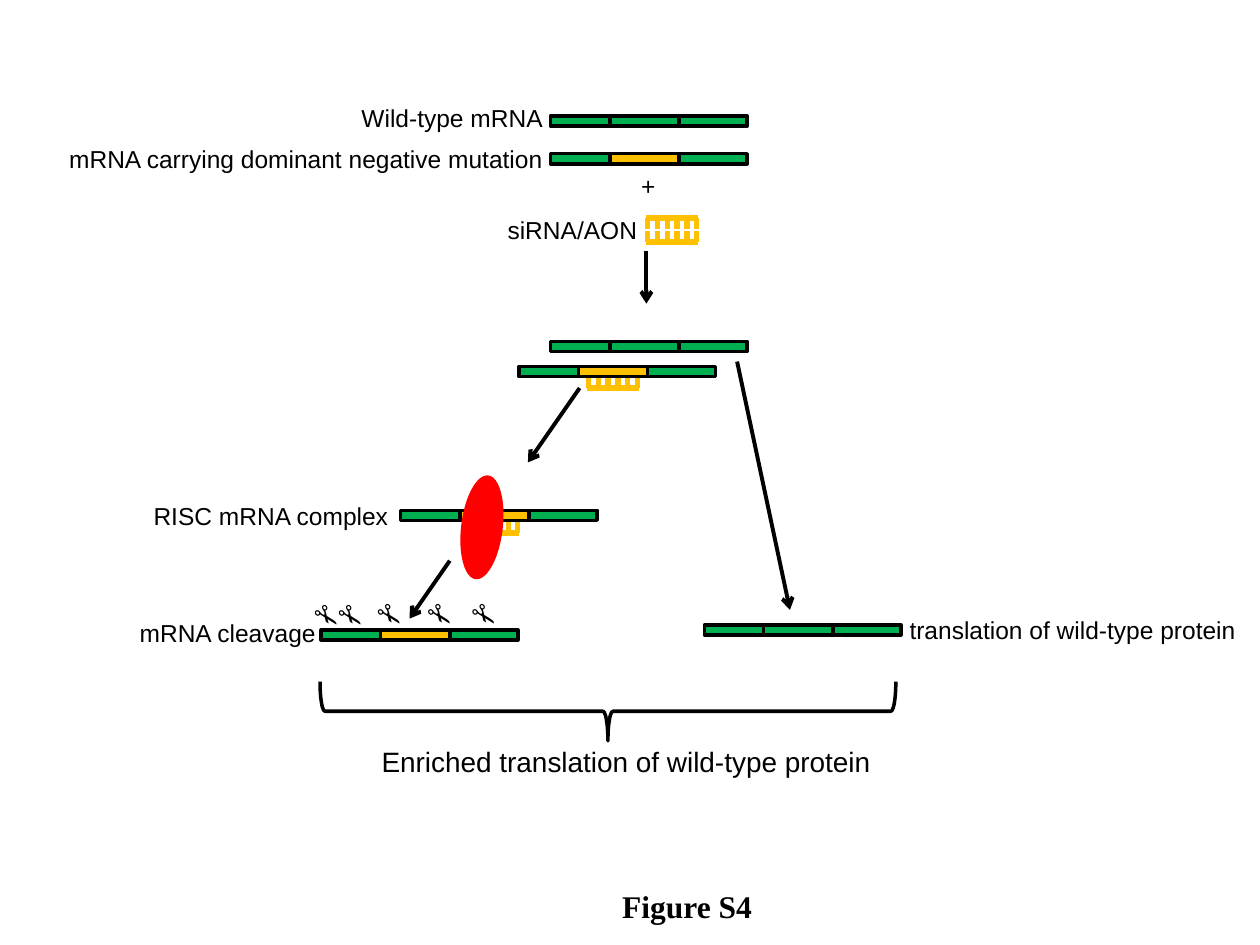
import pptx
import pptx.util
import pptx.dml.color
import pptx.enum.shapes
import pptx.enum.text
import pptx.oxml.ns
from dataclasses import dataclass
from lxml import etree
from pptx.util import Inches

RGB = pptx.dml.color.RGBColor.from_string
SHAPE = pptx.enum.shapes.MSO_SHAPE


@dataclass(frozen=True)
class Theme:
    ink: str = "000000"
    wild: str = "00B050"
    mutant: str = "FFC000"
    risc: str = "FF0000"
    font: str = "Arial"
    caption_font: str = "Times New Roman"
    label: float = 14
    summary: float = 16
    large: float = 18
    outline: float = 2
    arrow: float = 2.25
    comb: float = 3


T = Theme()


def add_text(s, x, y, w, h, text, size=T.label, font=T.font, bold=False, rotation=0):
    sp = s.shapes.add_textbox(Inches(x), Inches(y), Inches(w), Inches(h))
    sp.rotation = rotation
    tf = sp.text_frame
    tf.word_wrap = False
    tf.auto_size = pptx.enum.text.MSO_AUTO_SIZE.SHAPE_TO_FIT_TEXT
    r = tf.paragraphs[0].add_run()
    r.text = text
    r.font.size = pptx.util.Pt(size)
    r.font.name = font
    r.font.bold = bold
    r.font.color.rgb = RGB(T.ink)


def add_shape(s, kind, x, y, w, h, fill=None, line=None, rotation=0):
    sp = s.shapes.add_shape(kind, Inches(x), Inches(y), Inches(w), Inches(h))
    sp.shadow.inherit = False
    sp.rotation = rotation
    if fill:
        sp.fill.solid()
        sp.fill.fore_color.rgb = RGB(fill)
    else:
        sp.fill.background()
    if line:
        sp.line.color.rgb = RGB(line)
        sp.line.width = pptx.util.Pt(T.outline)
    else:
        sp.line.fill.background()


def add_line(shapes, x1, y1, x2, y2, color, width, arrow=False):
    cx = shapes.add_connector(pptx.enum.shapes.MSO_CONNECTOR.STRAIGHT,
                              Inches(x1), Inches(y1), Inches(x2), Inches(y2))
    cx.line.color.rgb = RGB(color)
    cx.line.width = pptx.util.Pt(width)
    if arrow:
        ln = cx.line._get_or_add_ln()
        etree.SubElement(ln, pptx.oxml.ns.qn("a:tailEnd"), type="arrow")
    etree.SubElement(cx._element.spPr, pptx.oxml.ns.qn("a:effectLst"))


def add_arrow(s, x1, y1, x2, y2):
    add_line(s.shapes, x1, y1, x2, y2, T.ink, T.arrow, arrow=True)


def add_strand(s, x, y, middle=T.wild):
    """An mRNA: two green ends around a middle segment."""
    for dx, w, fill in ((0, 0.47, T.wild), (1.01, 0.55, T.wild), (0.47, 0.55, middle)):
        add_shape(s, SHAPE.RECTANGLE, x + dx, y, w, 0.08, fill, T.ink)


def add_comb(s, x, spine, tips, w=0.41):
    """A short RNA strand: a spine with six teeth."""
    shapes = s.shapes.add_group_shape().shapes
    add_line(shapes, x, spine, x + w, spine, T.mutant, T.comb)
    gap = (w - 0.02) / 5
    for i in range(6):
        tooth = x + 0.01 + i * gap
        add_line(shapes, tooth, spine, tooth, tips, T.mutant, T.comb)


def add_inputs(s, x, y):
    # Two transcripts and the double-stranded siRNA
    add_strand(s, x, y)
    add_text(s, x - 1.6, y - 0.15, 1.65, 0.34, "Wild-type mRNA")
    add_strand(s, x, y + 0.3, T.mutant)
    add_text(s, x - 3.92, y + 0.17, 3.98, 0.34, "mRNA carrying dominant negative mutation")
    add_text(s, x + 0.62, y + 0.39, 0.32, 0.34, "+")
    add_text(s, x - 0.44, y + 0.74, 1.24, 0.34, "siRNA/AON")
    add_comb(s, x + 0.76, y + 0.81, y + 0.9)
    add_comb(s, x + 0.76, y + 1, y + 0.91)
    add_arrow(s, x + 0.76, y + 1.07, x + 0.76, y + 1.49)


def add_binding(s, x, y):
    # siRNA bound to the mutant transcript, then two routes
    add_strand(s, x + 0.25, y)
    add_comb(s, x + 0.54, y + 0.37, y + 0.28)
    add_strand(s, x, y + 0.2, T.mutant)
    add_arrow(s, x + 0.48, y + 0.37, x + 0.07, y + 0.96)
    add_arrow(s, x + 1.73, y + 0.16, x + 2.15, y + 2.13)


def add_risc(s, x, y):
    # Mutant transcript held by the RISC complex
    add_text(s, x - 2.06, y - 0.12, 2.08, 0.34, "RISC mRNA complex")
    add_comb(s, x + 0.54, y + 0.18, y + 0.08, w=0.4)
    add_strand(s, x, y, T.mutant)
    add_shape(s, SHAPE.OVAL, x + 0.23, y - 0.03, 0.83, 0.33, T.risc, rotation=276.9)
    add_arrow(s, x + 0.39, y + 0.4, x + 0.07, y + 0.86)


def add_cleavage(s, x, y):
    # Mutant transcript cut along its length
    add_strand(s, x, y, T.mutant)
    for dx, dy in ((-0.16, -0.28), (0.03, -0.28), (0.34, -0.29), (0.74, -0.29), (1.09, -0.29)):
        add_text(s, x + dx, y + dy, 0.53, 0.4, "✁", T.large, bold=True, rotation=31.8)
    add_text(s, x - 1.54, y - 0.14, 1.61, 0.34, "mRNA cleavage")


def add_translation(s, x, y):
    # Intact wild-type transcript
    add_strand(s, x, y)
    add_text(s, x + 1.53, y - 0.13, 2.81, 0.34, "translation of wild-type protein")


def add_outcome(s, x, y, w, h):
    # Brace turned to lie flat under both routes, with the summary
    add_shape(s, SHAPE.LEFT_BRACE, x + (w - h) / 2, y + (h - w) / 2, h, w,
              line=T.ink, rotation=270)
    add_text(s, x + 0.39, y + 0.45, 4.19, 0.37,
             "Enriched translation of wild-type protein", T.summary)


def main():
    prs = pptx.Presentation()
    prs.slide_width, prs.slide_height = Inches(10), Inches(7.5)
    s = prs.slides.add_slide(prs.slide_layouts[6])
    add_inputs(s, 4.37, 0.92)
    add_binding(s, 4.12, 2.71)
    add_risc(s, 3.18, 4.05)
    add_cleavage(s, 2.55, 5)
    add_translation(s, 5.59, 4.96)
    add_outcome(s, 2.54, 5.41, 4.57, 0.47)
    # Figure caption
    add_text(s, 4.84, 6.99, 1.24, 0.4, "Figure S4", T.large, T.caption_font, bold=True)
    prs.save("out.pptx")


if __name__ == "__main__":
    main()
